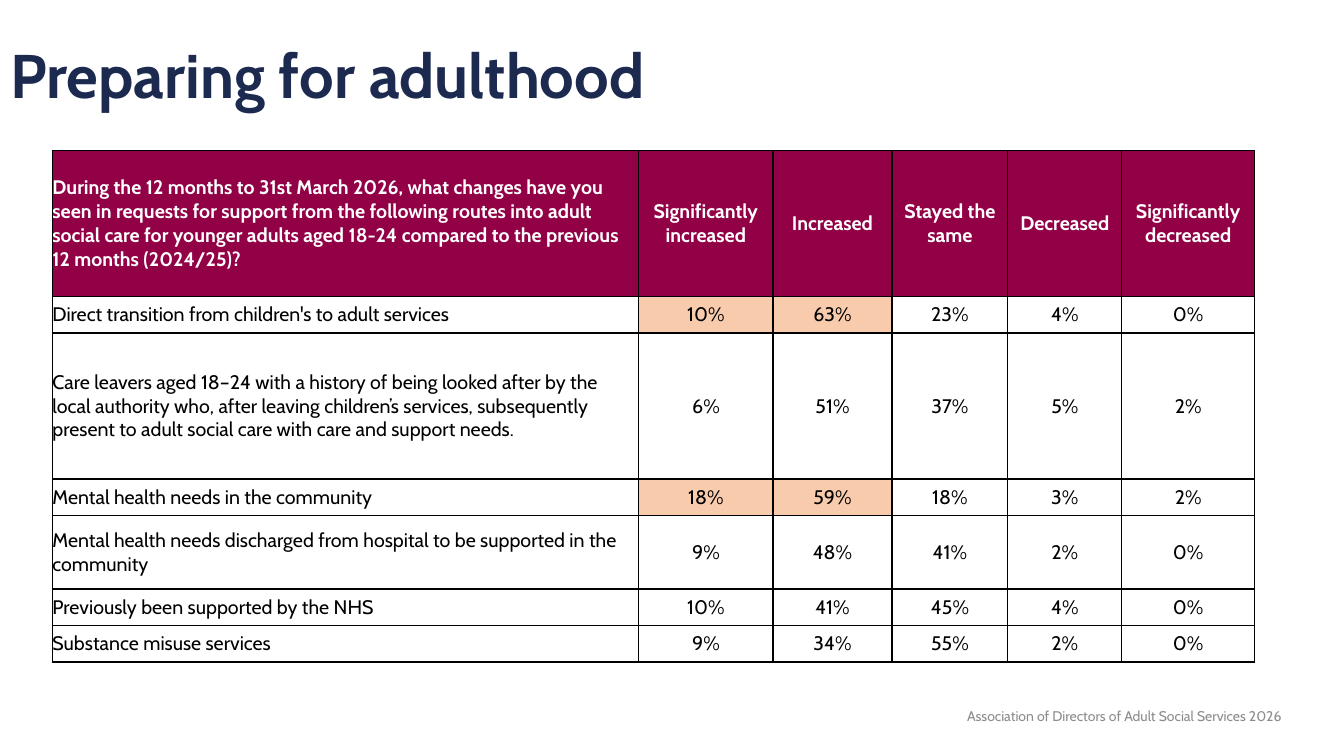
from pptx import Presentation
from pptx.dml.color import RGBColor
from pptx.enum.text import MSO_ANCHOR as Anchor, MSO_AUTO_SIZE as AutoSize, PP_ALIGN as Align
from pptx.oxml.ns import qn
from pptx.util import Cm, Pt
from lxml.etree import SubElement

FONT = "Cabin"
COLOURS = {
    "title": "1D2A50",
    "header": "920146",
    "highlight": "F8CBAD",
    "white": "FFFFFF",
    "black": "000000",
    "footer": "8C8C8C",
}

# Boxes and table tracks in centimetres
TITLE_BOX = (0, 0.13, 29.21, 3.68)
TABLE_BOX = (1.32, 3.79, 30.3, 12.89)
FOOTER_BOX = (21.11, 17.53, 11.43, 1.02)
COLUMN_WIDTHS = (14.78, 3.38, 3, 2.92, 2.87, 3.35)
SINGLE, DOUBLE, TALL = 0.92, 1.85, 3.68
ROW_HEIGHTS = (TALL, SINGLE, TALL, SINGLE, DOUBLE, SINGLE, SINGLE)

SURVEY_ROWS = [
    ("During the 12 months to 31st March 2026, what changes have you seen in requests "
     "for support from the following routes into adult social care for younger adults "
     "aged 18-24 compared to the previous 12 months (2024/25)?",
     "Significantly increased", "Increased", "Stayed the same", "Decreased",
     "Significantly decreased"),
    ("Direct transition from children's to adult services",
     "10%", "63%", "23%", "4%", "0%"),
    ("Care leavers aged 18–24 with a history of being looked after by the local "
     "authority who, after leaving children’s services, subsequently present to adult "
     "social care with care and support needs.",
     "6%", "51%", "37%", "5%", "2%"),
    ("Mental health needs in the community", "18%", "59%", "18%", "3%", "2%"),
    ("Mental health needs discharged from hospital to be supported in the community",
     "9%", "48%", "41%", "2%", "0%"),
    ("Previously been supported by the NHS", "10%", "41%", "45%", "4%", "0%"),
    ("Substance misuse services", "9%", "34%", "55%", "2%", "0%"),
]
HIGHLIGHTED = {(row, column) for row in (1, 3) for column in (1, 2)}


def write(frame, text, size, colour, align, bold=False):
    frame.text = text
    frame.word_wrap = True
    para = frame.paragraphs[0]
    para.alignment = align
    font = para.runs[0].font
    font.name, font.size, font.bold = FONT, Pt(size), bold
    font.color.rgb = RGBColor.from_string(COLOURS[colour])
    return para


def add_title(page, box):
    title = page.shapes.title
    title.left, title.top, title.width, title.height = map(Cm, box)
    frame = title.text_frame
    para = write(frame, "Preparing for adulthood", 44, "title", Align.LEFT, bold=True)
    para.line_spacing = 0.9
    frame.vertical_anchor = Anchor.MIDDLE
    frame.auto_size = AutoSize.NONE


def add_borders(cell):
    properties = cell._tc.get_or_add_tcPr()
    for index, side in enumerate(("lnL", "lnR", "lnT", "lnB")):
        line = properties.makeelement(qn(f"a:{side}"), {"w": str(Pt(1))})
        fill = SubElement(line, qn("a:solidFill"))
        SubElement(fill, qn("a:srgbClr"), val=COLOURS["black"])
        properties.insert(index, line)


def format_cell(cell, text, row, column):
    is_header, is_label = row == 0, column == 0
    cell.margin_left = cell.margin_top = cell.margin_bottom = 0
    cell.margin_right = Cm(0.2) if is_label and not is_header else 0
    cell.vertical_anchor = Anchor.MIDDLE
    write(cell.text_frame, text, 14, "white" if is_header else "black",
          Align.LEFT if is_label else Align.CENTER, bold=is_header)
    if is_header:
        shade = "header"
    else:
        shade = "highlight" if (row, column) in HIGHLIGHTED else "white"
    cell.fill.solid()
    cell.fill.fore_color.rgb = RGBColor.from_string(COLOURS[shade])
    add_borders(cell)


def add_survey_table(page, box):
    table = page.shapes.add_table(
        len(SURVEY_ROWS), len(COLUMN_WIDTHS), *map(Cm, box)).table
    for column, width in zip(table.columns, COLUMN_WIDTHS):
        column.width = Cm(width)
    for row, height in zip(table.rows, ROW_HEIGHTS):
        row.height = Cm(height)
    for row, texts in enumerate(SURVEY_ROWS):
        for column, text in enumerate(texts):
            format_cell(table.cell(row, column), text, row, column)


def add_footer(page, box):
    frame = page.shapes.add_textbox(*map(Cm, box)).text_frame
    write(frame, "Association of Directors of Adult Social Services 2026",
          10, "footer", Align.RIGHT)
    frame.vertical_anchor = Anchor.MIDDLE


def main():
    deck = Presentation()
    deck.slide_width, deck.slide_height = Cm(33.87), Cm(19.05)
    page = deck.slides.add_slide(deck.slide_layouts[5])  # Title Only
    add_title(page, TITLE_BOX)
    add_survey_table(page, TABLE_BOX)
    add_footer(page, FOOTER_BOX)
    deck.save("out.pptx")


if __name__ == "__main__":
    main()
